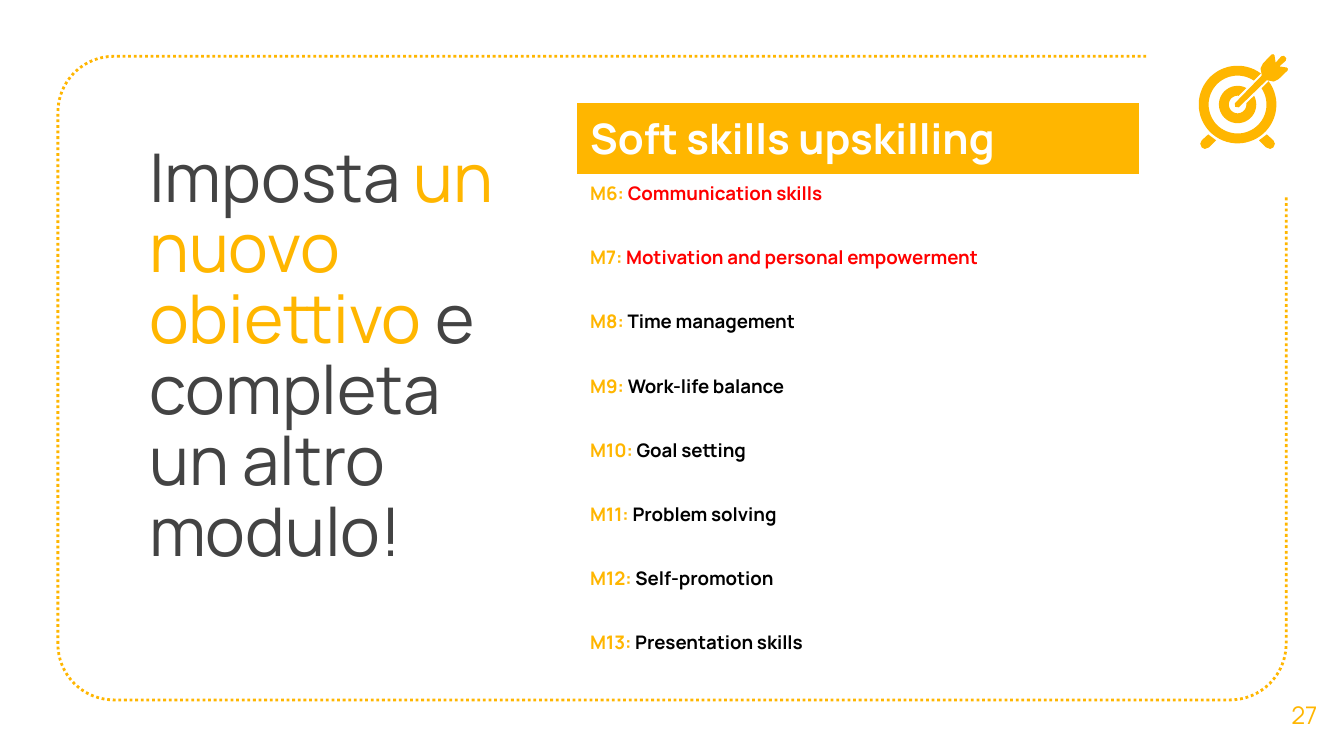
from math import asin, cos, degrees, radians, sin

from pptx import Presentation
from pptx.dml.color import RGBColor
from pptx.enum.dml import MSO_LINE
from pptx.enum.text import MSO_ANCHOR, MSO_AUTO_SIZE, PP_ALIGN
from pptx.util import Pt

AMBER, GREY, RED, BLACK, WHITE = "FFB600", "434343", "FF0000", "000000", "FFFFFF"
NO_TABLE_STYLE = "{2D5ABB26-0587-4C30-8999-92F81FD0307C}"

MODULES = [
    ("Communication skills", RED),
    ("Motivation and personal empowerment", RED),
    ("Time management", BLACK),
    ("Work-life balance", BLACK),
    ("Goal setting", BLACK),
    ("Problem solving", BLACK),
    ("Self-promotion", BLACK),
    ("Presentation skills", BLACK),
]


def color(hex_code):
    return RGBColor.from_string(hex_code)


def arc(x, y, radius, start, end, steps=16):
    """Points along a circle; angles in degrees, counterclockwise from the right."""
    angles = [radians(start + (end - start) * i / steps) for i in range(steps + 1)]
    return [(x + radius * cos(a), y - radius * sin(a)) for a in angles]


class SlideBuilder:
    font = "Manrope"

    def __init__(self, slide):
        self.slide = slide

    def add_runs(self, frame, runs, size, bold=False, align=PP_ALIGN.LEFT):
        paragraph = frame.paragraphs[0]
        paragraph.alignment = align
        paragraph.font.name = self.font
        paragraph.font.size = Pt(size)
        paragraph.font.bold = bold
        for text, shade in runs:
            run = paragraph.add_run()
            run.text = text
            run.font.color.rgb = color(shade)
        return paragraph

    def set_frame(self, frame, anchor):
        frame.word_wrap = True
        frame.auto_size = MSO_AUTO_SIZE.NONE
        frame.vertical_anchor = anchor
        frame.margin_left = frame.margin_right = Pt(7.2)
        frame.margin_top = frame.margin_bottom = Pt(7.2)

    def title(self, runs, left, top, width, height, size, spacing):
        heading = self.slide.shapes.title
        heading.left, heading.top = Pt(left), Pt(top)
        heading.width, heading.height = Pt(width), Pt(height)
        self.set_frame(heading.text_frame, MSO_ANCHOR.TOP)
        self.add_runs(heading.text_frame, runs, size).line_spacing = spacing

    def label(self, text, left, top, width, height, size):
        box = self.slide.shapes.add_textbox(Pt(left), Pt(top), Pt(width), Pt(height))
        self.set_frame(box.text_frame, MSO_ANCHOR.MIDDLE)
        self.add_runs(box.text_frame, [(text, AMBER)], size, align=PP_ALIGN.CENTER)

    def outline(self, points, closed=True):
        start, *rest = [(Pt(x), Pt(y)) for x, y in points]
        builder = self.slide.shapes.build_freeform(*start)
        builder.add_line_segments(rest, close=closed)
        shape = builder.convert_to_shape()
        shape.shadow.inherit = False
        return shape

    def solid(self, points):
        shape = self.outline(points)
        shape.fill.solid()
        shape.fill.fore_color.rgb = color(AMBER)
        shape.line.fill.background()

    def dotted(self, points):
        shape = self.outline(points, closed=False)
        shape.fill.background()
        shape.line.color.rgb = color(AMBER)
        shape.line.width = Pt(1.5)
        shape.line.dash_style = MSO_LINE.ROUND_DOT

    def split_ring(self, x, y, outer, inner, half_gap):
        """Ring cut towards the upper right by a gap with parallel sides."""
        def side(radius):
            turn = degrees(asin(half_gap / radius))
            return arc(x, y, radius, 45 + turn, 405 - turn, 60)
        self.solid(side(outer) + side(inner)[::-1])

    def table(self, header, rows, left, top, width, header_height, row_height):
        height = header_height + row_height * len(rows)
        table = self.slide.shapes.add_table(
            len(rows) + 1, 1, Pt(left), Pt(top), Pt(width), Pt(height)).table
        table.first_row = table.horz_banding = False
        table._tbl.tblPr.find("{*}tableStyleId").text = NO_TABLE_STYLE
        for index, runs in enumerate([header] + rows):
            table.rows[index].height = Pt(row_height if index else header_height)
            cell = table.cell(index, 0)
            cell.margin_left = cell.margin_right = Pt(7.2)
            cell.margin_top = cell.margin_bottom = Pt(3.6)
            if index:
                cell.fill.background()
            else:
                cell.fill.solid()
                cell.fill.fore_color.rgb = color(AMBER)
            self.add_runs(cell.text_frame, runs, 10 if index else 22.5, bold=True)


def main():
    deck = Presentation()
    deck.slide_width, deck.slide_height = Pt(720), Pt(405)
    page = SlideBuilder(deck.slides.add_slide(deck.slide_layouts[5]))

    # Dotted frame, open at the upper right
    left, top, right, bottom, radius = 31, 30.2, 689, 375, 30
    page.dotted(
        [(614, top)]
        + arc(left + radius, top + radius, radius, 90, 180)
        + arc(left + radius, bottom - radius, radius, 180, 270)
        + arc(right - radius, bottom - radius, radius, 270, 360)
        + [(right, 105)])

    # Title
    page.title([("Imposta ", GREY), ("un nuovo obiettivo", AMBER),
                (" e completa un altro modulo!", GREY)],
               72.7, 70.6, 213.8, 67.7, size=36, spacing=0.88)

    # Page number
    page.label("27", 677.5, 361.5, 42.5, 43.2, size=13)

    # Target: two rings, two feet and an arrow
    x, y = 663, 56
    page.split_ring(x, y, 20.8, 15.5, 2.9)
    page.split_ring(x, y, 10, 4.7, 2.9)

    foot = [(-15.7, 16), (-19.2, 19.2), (-20, 21), (-19.2, 23), (-17.5, 23.8),
            (-15.3, 23), (-11.5, 19.2)]
    for mirror in (1, -1):
        page.solid([(x + mirror * dx, y + dy) for dx, dy in foot])

    half_arrow = [(-1.3, -1.2), (-1.5, 0.6), (13, 15.6), (12.3, 19.4), (13.6, 22),
                  (18.2, 26.8), (19.2, 27), (19.8, 26.3), (20.4, 22.4),
                  (23.4, 25.8), (24.8, 26.1)]
    arrow = half_arrow + [(across, up) for up, across in half_arrow[::-1]]
    page.solid([(x + across, y - up) for across, up in arrow])

    # Module list
    modules = [[(f"M{number}: ", AMBER), (name, shade)]
               for number, (name, shade) in enumerate(MODULES, start=6)]
    page.table([("Soft skills upskilling", WHITE)], modules,
               309, 55.3, 301, header_height=38, row_height=34.4)

    deck.save("out.pptx")


if __name__ == "__main__":
    main()
